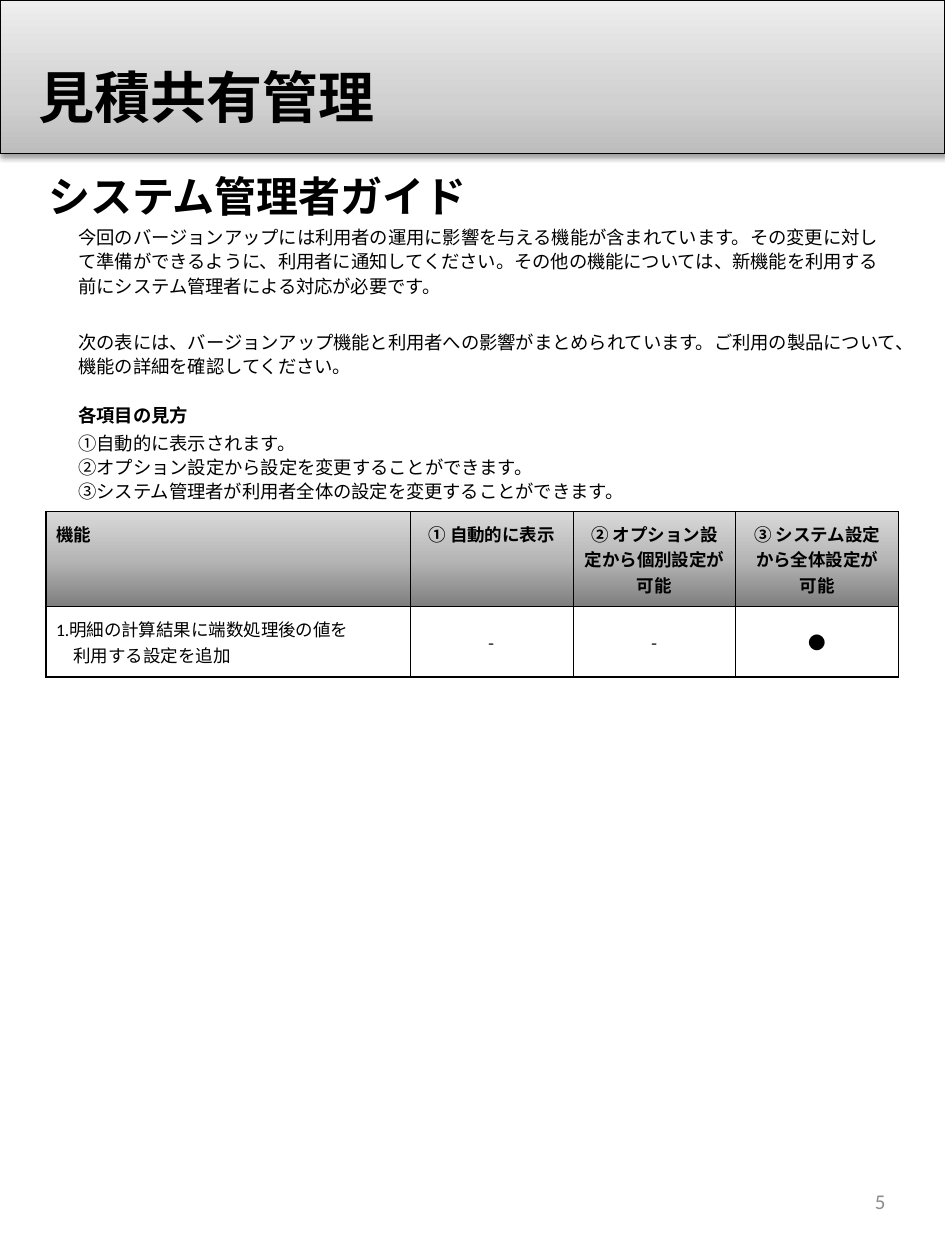
from copy import deepcopy

from lxml.etree import SubElement
from pptx import Presentation
from pptx.dml.color import RGBColor
from pptx.enum.shapes import MSO_SHAPE
from pptx.enum.text import MSO_ANCHOR, PP_ALIGN
from pptx.oxml import parse_xml
from pptx.oxml.ns import nsdecls, qn
from pptx.util import Pt

FONT = "Calibri"
BLACK = "000000"
BANNER_STOPS = [(0, "BDBDBD"), (0.35, "D1D1D1"), (1, "EEEEEE")]
HEADER_STOPS = [(0, "7E7E7E"), (0.5, "B6B6B6"), (1, "D9D9D9")]
GUIDE = [
    ("今回のバージョンアップには利用者の運用に影響を与える機能が含まれています。"
     "その変更に対して準備ができるように、利用者に通知してください。"
     "その他の機能については、新機能を利用する前にシステム管理者による対応が必要です。", False, 2.1),
    ("次の表には、バージョンアップ機能と利用者への影響がまとめられています。"
     "ご利用の製品について、機能の詳細を確認してください。", False, 18.3),
    ("各項目の見方", True, 14.3),
    ("①自動的に表示されます。\n"
     "②オプション設定から設定を変更することができます。\n"
     "③システム管理者が利用者全体の設定を変更することができます。", False, 2.1),
]
FEATURES = [
    [["機能"], ["① 自動的に表示"], ["② オプション設定から個別設定が", "可能"],
     ["③ システム設定", "から全体設定が\n可能"]],
    [["1.明細の計算結果に端数処理後の値を", "利用する設定を追加"], ["-"], ["-"], ["●"]],
]


def color(code):
    """Turn a hex string into a colour."""
    return RGBColor.from_string(code)


def apply(target, values):
    """Set each attribute of target from a dict."""
    for name, value in values.items():
        setattr(target, name, value)


def write(paragraph, text, size, bold=False, code=BLACK, font=FONT, **layout):
    """Write one formatted paragraph."""
    paragraph.text = text
    apply(paragraph, layout)
    for run in paragraph.runs:
        apply(run.font, {"name": font, "size": Pt(size), "bold": bold})
        run.font.color.rgb = color(code)


def indent(paragraph, left):
    """Indent a whole paragraph from the left."""
    properties = paragraph._p.get_or_add_pPr()
    properties.set("marL", str(Pt(left)))
    properties.set("indent", "0")


def shade(fill, owner, stops):
    """Fill with an upward gradient of three stops."""
    fill.gradient()
    fill.gradient_angle = 90
    stop_list = next(owner.iter(qn("a:gsLst")))
    stop_list.append(deepcopy(stop_list[-1]))
    for stop, (position, code) in zip(fill.gradient_stops, stops):
        stop.position = position
        stop.color.rgb = color(code)


def add_text(slide, box, anchor):
    """Add a wrapping text frame in the box."""
    frame = slide.shapes.add_textbox(*map(Pt, box)).text_frame
    apply(frame, {"word_wrap": True, "vertical_anchor": anchor})
    return frame


def add_page_number(slide, box, number):
    """Place the page number at the right of its box."""
    frame = add_text(slide, box, MSO_ANCHOR.MIDDLE)
    write(frame.paragraphs[0], number, 12, code="8C8C8C", alignment=PP_ALIGN.RIGHT)


def add_banner(slide, box, title):
    """Place the shaded banner with its title."""
    left, top, width, height = box
    banner = slide.shapes.add_shape(MSO_SHAPE.RECTANGLE, *map(Pt, box))
    shade(banner.fill, banner._element.spPr, BANNER_STOPS)
    banner.line.color.rgb = color(BLACK)
    banner.line.width = Pt(0.75)
    banner.shadow.inherit = False
    effects = banner._element.spPr.find(qn("a:effectLst"))
    effects.append(parse_xml(
        f'<a:outerShdw {nsdecls("a")} blurRad="{Pt(3.1)}" dist="{Pt(1.6)}" dir="5400000" '
        f'rotWithShape="0"><a:srgbClr val="{BLACK}"><a:alpha val="38000"/></a:srgbClr></a:outerShdw>'))
    frame = add_text(slide, (left + 15, top + 25.4, width - 30, height - 29), MSO_ANCHOR.MIDDLE)
    write(frame.paragraphs[0], title, 32, True)


def add_guide(slide, box, heading):
    """Place the guide heading and its indented paragraphs."""
    frame = add_text(slide, box, MSO_ANCHOR.TOP)
    write(frame.paragraphs[0], heading, 24, True)
    for text, bold, gap in GUIDE:
        paragraph = frame.add_paragraph()
        write(paragraph, text, 10.5, bold, line_spacing=1.1, space_before=Pt(gap))
        indent(paragraph, 17.3)


def add_borders(cell, widths):
    """Draw black left, right, top and bottom borders of the given widths."""
    properties = cell._tc.get_or_add_tcPr()
    for place, (side, width) in enumerate(zip(("lnL", "lnR", "lnT", "lnB"), widths)):
        border = parse_xml(f'<a:{side} {nsdecls("a")} w="{Pt(width)}"/>')
        SubElement(SubElement(border, qn("a:solidFill")), qn("a:srgbClr")).set("val", BLACK)
        properties.insert(place, border)


def add_features(slide, box):
    """Place the table of features and their effects."""
    table = slide.shapes.add_table(len(FEATURES), len(FEATURES[0]), *map(Pt, box)).table
    apply(table, {"first_row": False, "horz_banding": False})
    for column, width in zip(table.columns, (208.2, 93, 93, 93)):
        column.width = Pt(width)
    for row, height in zip(table.rows, (54.4, 40.2)):
        row.height = Pt(height)
    sides = ("left", "right", "top", "bottom")
    for r, texts in enumerate(FEATURES):
        for c, lines in enumerate(texts):
            cell, header = table.cell(r, c), r == 0
            apply(cell, {f"margin_{side}": Pt(5.7) for side in sides})
            cell.vertical_anchor = MSO_ANCHOR.TOP if header else MSO_ANCHOR.MIDDLE
            if header:
                shade(cell.fill, cell._tc, HEADER_STOPS)
            else:
                cell.fill.background()
            outer = (c == 0, c == len(texts) - 1, header, r == len(FEATURES) - 1)
            add_borders(cell, [1 if edge else 0.5 for edge in outer])
            frame = cell.text_frame
            for i, line in enumerate(lines):
                paragraph = frame.add_paragraph() if i else frame.paragraphs[0]
                write(paragraph, line, 10, header,
                      font=FONT if header or c == 0 else "Noto Sans CJK JP",
                      alignment=PP_ALIGN.CENTER if c else PP_ALIGN.LEFT)
                if i and c == 0:
                    indent(paragraph, 10)


def main():
    """Build the slide and save it."""
    deck = Presentation()
    apply(deck, {"slide_width": Pt(540), "slide_height": Pt(720)})
    slide = deck.slides.add_slide(deck.slide_layouts[6])
    add_page_number(slide, (387, 667.4, 126, 38.2), "5")
    add_banner(slide, (0, 0, 540, 87.7), "見積共有管理")
    add_guide(slide, (20.5, 93.6, 499, 550), "システム管理者ガイド")
    add_features(slide, (26.3, 292.3, 487.2, 94.6))
    deck.save("out.pptx")


if __name__ == "__main__":
    main()
